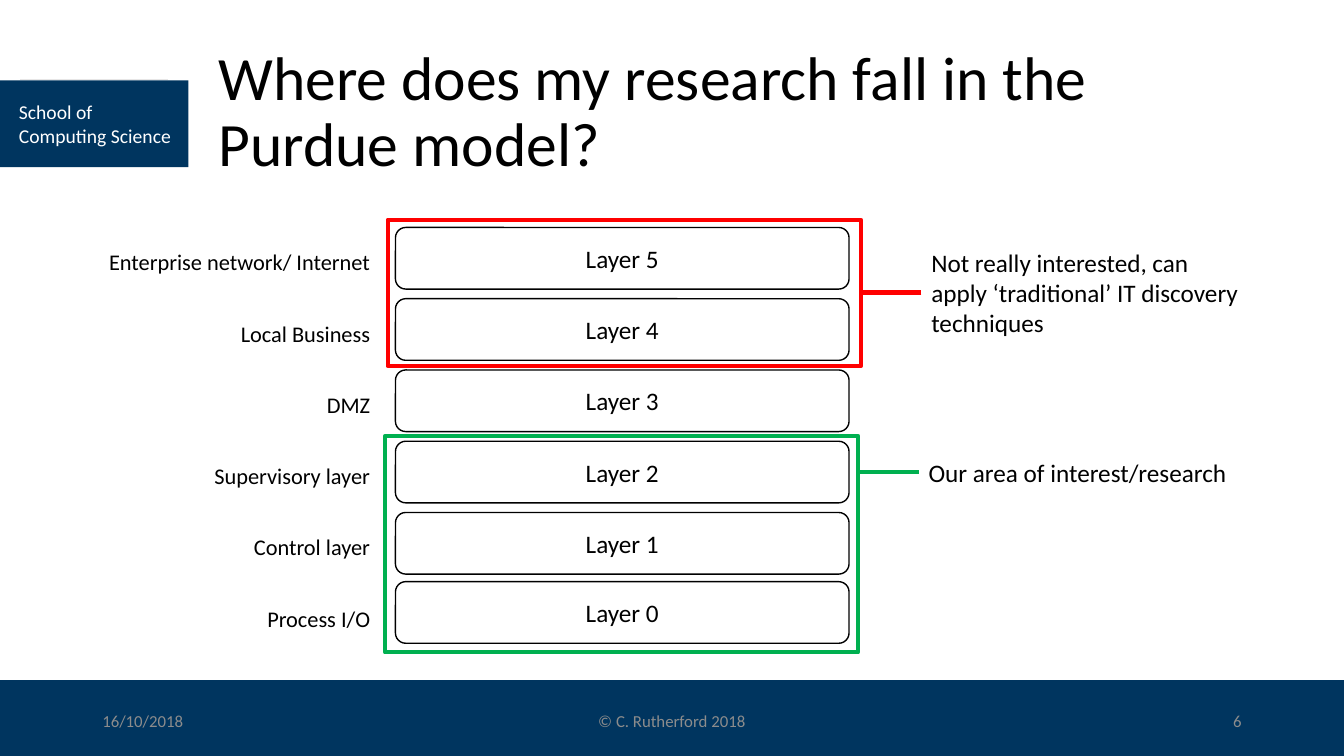
"""Build the slide that places the research within the Purdue model."""
import pptx
import pptx.dml.color
import pptx.enum.shapes
import pptx.enum.text
import pptx.oxml
import pptx.util

Pt = pptx.util.Pt
RGBColor = pptx.dml.color.RGBColor
SHAPE = pptx.enum.shapes.MSO_SHAPE
ALIGN = pptx.enum.text.PP_ALIGN
ANCHOR = pptx.enum.text.MSO_ANCHOR

NAVY = RGBColor(0x00, 0x35, 0x5F)
WHITE = RGBColor(0xFF, 0xFF, 0xFF)
BLACK = RGBColor(0x00, 0x00, 0x00)
PALE = RGBColor(0xE7, 0xE6, 0xE6)
GREY = RGBColor(0x8C, 0x8C, 0x8C)
RED = RGBColor(0xFF, 0x00, 0x00)
GREEN = RGBColor(0x00, 0xB0, 0x50)

WIDTH, HEIGHT = 960, 540
LAYERS = [
    ("Layer 5", "Enterprise network/ Internet"),
    ("Layer 4", "Local Business"),
    ("Layer 3", "DMZ"),
    ("Layer 2", "Supervisory layer"),
    ("Layer 1", "Control layer"),
    ("Layer 0", "Process I/O"),
]


def set_text(sp, lines, size, color=BLACK, align=ALIGN.LEFT, spacing=1.0, **frame):
    tf = sp.text_frame
    settings = {"word_wrap": True, "vertical_anchor": ANCHOR.MIDDLE, **frame}
    for name, value in settings.items():
        setattr(tf, name, value)
    for i, line in enumerate(lines):
        p = tf.paragraphs[0] if i == 0 else tf.add_paragraph()
        p.alignment, p.line_spacing = align, spacing
        r = p.add_run()
        r.text = line
        for name, value in {"name": "Calibri", "size": Pt(size)}.items():
            setattr(r.font, name, value)
        r.font.color.rgb = color


def add_text(s, box, text, size, **style):
    sp = s.shapes.add_textbox(*map(Pt, box))
    set_text(sp, [text], size, **style)


def add_box(s, kind, box, fill, line, weight):
    sp = s.shapes.add_shape(kind, *map(Pt, box))
    sp.shadow.inherit = False
    if fill is None:
        sp.fill.background()
    else:
        sp.fill.solid()
        sp.fill.fore_color.rgb = fill
    sp.line.color.rgb, sp.line.width = line, Pt(weight)
    return sp


def add_line(s, x1, x2, y, color, weight):
    sp = s.shapes.add_connector(
        pptx.enum.shapes.MSO_CONNECTOR.STRAIGHT, Pt(x1), Pt(y), Pt(x2), Pt(y))
    sp.line.color.rgb, sp.line.width = color, Pt(weight)
    sp._element.spPr.append(pptx.oxml.parse_xml(
        '<a:effectLst xmlns:a="http://schemas.openxmlformats.org/drawingml/2006/main"/>'))


def add_banner(s, box):
    x, y, w, h = box
    sp = add_box(s, SHAPE.RECTANGLE, box, NAVY, NAVY, 0)
    sp.line.fill.background()
    set_text(sp, ["School of", "Computing Science"], 14, WHITE,
             margin_left=Pt(13.5), margin_right=0)
    add_line(s, x + 14.4, x + w - 14.4, y - 0.5, PALE, 0.5)


def add_footer(s, box):
    x, y, w, h = box
    add_box(s, SHAPE.RECTANGLE, box, NAVY, NAVY, 1)
    fields = [
        (66, 216, "16/10/2018", ALIGN.LEFT),
        (318, 324, "© C. Rutherford 2018", ALIGN.CENTER),
        (678, 216, "6", ALIGN.RIGHT),
    ]
    for left, width, text, align in fields:
        add_text(s, (x + left, y + 14, width, 28.75), text, 12, color=GREY, align=align)


def add_layers(s, box):
    x, y, w, h = box
    label_w, gap, box_h, pitch = 205, 11, 44, 50.9
    for i, (layer, label) in enumerate(LAYERS):
        top = y + i * pitch
        sp = add_box(s, SHAPE.ROUNDED_RECTANGLE,
                     (x + label_w + gap, min(top, y + h - box_h), w - label_w - gap, box_h),
                     WHITE, BLACK, 1)
        set_text(sp, [layer], 18, align=ALIGN.CENTER)
        add_text(s, (x, top + 11.5, label_w, 26.6), label, 16,
                 align=ALIGN.RIGHT, vertical_anchor=ANCHOR.TOP)


def add_callout(s, box, color, line_y, note, note_top, note_w, note_h):
    x, y, w, h = box
    note_x = x + w + 43.2
    add_box(s, SHAPE.RECTANGLE, box, None, color, 3)
    add_line(s, note_x, x + w, line_y, color, 3)
    add_text(s, (note_x, note_top, note_w, note_h), note, 18, vertical_anchor=ANCHOR.TOP)


def main():
    prs = pptx.Presentation()
    prs.slide_width, prs.slide_height = Pt(WIDTH), Pt(HEIGHT)
    s = prs.slides.add_slide(prs.slide_layouts[6])
    add_footer(s, (0, 486.5, WIDTH, 53.5))
    add_banner(s, (0, 57.5, 134.5, 62))
    add_text(s, (149, 28.75, 745, 104.4),
             "Where does my research fall in the Purdue model?", 44, spacing=0.9)
    add_layers(s, (66.5, 162.5, 540, 297))
    add_callout(s, (275, 311.5, 338, 154.5), GREEN, 337,
                "Our area of interest/research", 322.75, 236, 29)
    add_callout(s, (277, 157, 338, 104.5), RED, 209,
                "Not really interested, can apply ‘traditional’ IT discovery techniques",
                172.75, 236, 72.7)
    prs.save("out.pptx")


if __name__ == "__main__":
    main()
